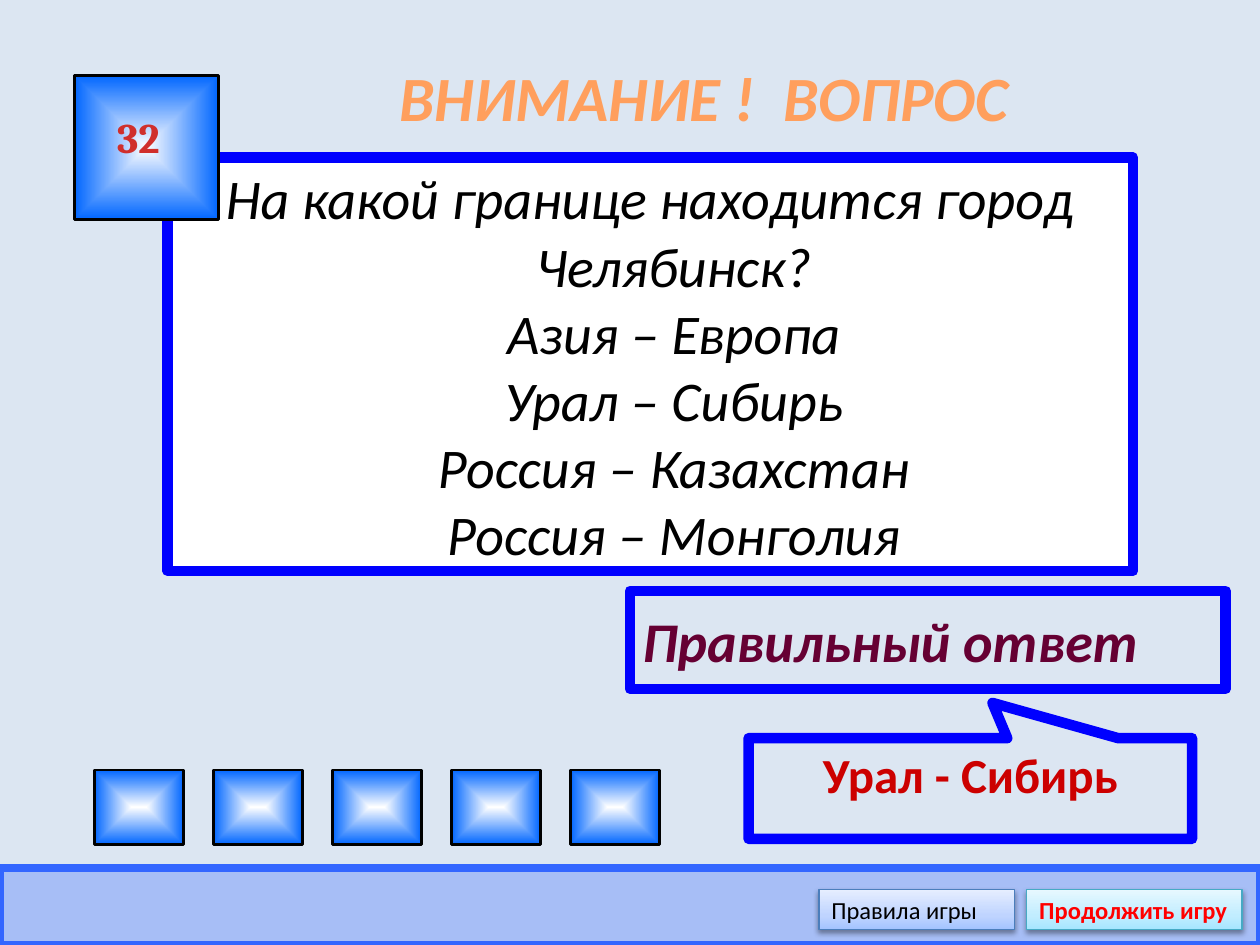
from dataclasses import dataclass
from typing import Optional, Union

import pptx
import pptx.dml.color
import pptx.enum.shapes
import pptx.enum.text
import pptx.oxml
import pptx.oxml.ns
import pptx.util
from pptx.util import Cm, Pt

Shapes = pptx.enum.shapes.MSO_SHAPE
Align = pptx.enum.text.PP_ALIGN
Anchor = pptx.enum.text.MSO_ANCHOR
qn = pptx.oxml.ns.qn
NAMESPACE = pptx.oxml.ns.nsdecls("a")

BACKGROUND = "DCE6F2"
BLUE = "0000FF"
BAR_BLUE = "3366FF"


@dataclass(frozen=True)
class Gradient:
    """Stops are (percent, colour); without an angle it spreads from the centre."""
    stops: tuple
    angle: Optional[int] = None


Paint = Union[str, Gradient]


@dataclass(frozen=True)
class Box:
    """Place and size in centimetres."""
    left: float
    top: float
    width: float
    height: float


@dataclass(frozen=True)
class Label:
    text: str
    size: int
    paint: Paint
    bold: bool = False
    italic: bool = False
    font: str = "Calibri"
    align: Align = Align.LEFT
    anchor: Anchor = Anchor.TOP
    wrap: bool = True


@dataclass(frozen=True)
class Button:
    box: Box
    fill: Gradient
    line: str
    label: Label


TILE_FILL = Gradient(((0, "FFFFFF"), (100, "0066FF")))
TITLE_PAINT = Gradient(((0, "FFA367"), (25, "FF9F5D"), (50, "F38E3A"),
                        (75, "FF9F5D"), (100, "FFA367")), 90)
NUMBER_PAINT = Gradient(((0, "FC7C7A"), (75, "D02F2C"), (100, "C70500")), 90)

QUESTION = "\v".join((
    "На какой границе находится город Челябинск?",
    "Азия – Европа",
    "Урал – Сибирь",
    "Россия – Казахстан",
    "Россия – Монголия",
))

BUTTONS = (
    Button(Box(16.51, 17.93, 3.94, 0.81),
           Gradient(((0, "A4C4FF"), (35, "BFD4FF"), (100, "E6EEFF")), 270), "4B7EBC",
           Label("Правила игры", 14, "000000", anchor=Anchor.MIDDLE, wrap=False)),
    Button(Box(20.7, 17.93, 4.34, 0.81),
           Gradient(((0, "A7E6FF"), (35, "C1EDFF"), (100, "E7F8FF")), 270), "46AAC5",
           Label("Продолжить игру", 14, "FF0000", bold=True,
                 anchor=Anchor.MIDDLE, wrap=False)),
)


def color(value: str) -> pptx.dml.color.RGBColor:
    return pptx.dml.color.RGBColor.from_string(value)


def apply_paint(fill, owner, paint: Paint) -> None:
    """Fill with a colour or gradient; owner is the XML element around the fill."""
    if isinstance(paint, str):
        fill.solid()
        fill.fore_color.rgb = color(paint)
        return
    fill.gradient()
    gradient = next(owner.iter(qn("a:gradFill")))
    for child in list(gradient):
        gradient.remove(child)
    stops = "".join(f'<a:gs pos="{position * 1000}"><a:srgbClr val="{value}"/></a:gs>'
                    for position, value in paint.stops)
    if paint.angle is None:
        direction = (f'<a:path {NAMESPACE} path="rect"><a:fillToRect l="50000" '
                     't="50000" r="50000" b="50000"/></a:path>')
    else:
        direction = f'<a:lin {NAMESPACE} ang="{paint.angle * 60000}" scaled="0"/>'
    gradient.append(pptx.oxml.parse_xml(f"<a:gsLst {NAMESPACE}>{stops}</a:gsLst>"))
    gradient.append(pptx.oxml.parse_xml(direction))


def write_label(shape, label: Label):
    frame = shape.text_frame
    frame.word_wrap = label.wrap
    frame.vertical_anchor = label.anchor
    paragraph = frame.paragraphs[0]
    paragraph.text = label.text
    paragraph.alignment = label.align
    font = paragraph.font
    font.name, font.size = label.font, Pt(label.size)
    font.bold, font.italic = label.bold, label.italic
    apply_paint(font.fill, paragraph._p, label.paint)
    return paragraph


def add_panel(slide, kind: Shapes, box: Box, fill: Paint, line: str, line_width: float):
    shape = slide.shapes.add_shape(kind, Cm(box.left), Cm(box.top),
                                   Cm(box.width), Cm(box.height))
    shape.shadow.inherit = False
    apply_paint(shape.fill, shape._element.spPr, fill)
    shape.line.color.rgb = color(line)
    shape.line.width = Pt(line_width)
    return shape


def add_text(slide, box: Box, label: Label) -> None:
    write_label(slide.shapes.add_textbox(Cm(box.left), Cm(box.top),
                                         Cm(box.width), Cm(box.height)), label)


def add_tile(slide, box: Box) -> None:
    add_panel(slide, Shapes.ACTION_BUTTON_CUSTOM, box, TILE_FILL, "000000", 1.5)


def add_question(slide) -> None:
    panel = add_panel(slide, Shapes.RECTANGLE, Box(3.38, 3.18, 19.46, 8.33),
                      "FFFFFF", BLUE, 6)
    panel.line._get_or_add_ln().append(pptx.oxml.parse_xml(f"<a:round {NAMESPACE}/>"))
    paragraph = write_label(panel, Label(QUESTION, 32, "000000", italic=True,
                                         align=Align.CENTER))
    paragraph.space_before = Pt(6.4)
    properties = paragraph._p.get_or_add_pPr()
    properties.set("marL", str(Cm(0.95)))
    properties.set("indent", str(Cm(-0.95)))


def add_answer(slide) -> None:
    heading = add_panel(slide, Shapes.RECTANGLE, Box(12.7, 11.91, 12.01, 1.98),
                        BACKGROUND, BLUE, 6)
    write_label(heading, Label("Правильный ответ", 32, "660033", bold=True, italic=True,
                               anchor=Anchor.MIDDLE, wrap=False))
    callout = add_panel(slide, Shapes.RECTANGULAR_CALLOUT, Box(15.09, 14.88, 8.94, 2.03),
                        BACKGROUND, BLUE, 6)
    callout.rotation = 180
    callout.adjustments[0] = -0.05
    callout.adjustments[1] = 0.85
    write_label(callout, Label("Урал - Сибирь", 28, "CC0000", bold=True,
                               align=Align.CENTER))
    callout.text_frame._txBody.bodyPr.set("rot", str(180 * 60000))


def add_button(slide, button: Button) -> None:
    shape = add_panel(slide, Shapes.RECTANGLE, button.box, button.fill, button.line, 0.75)
    write_label(shape, button.label)
    effects = shape._element.spPr.find(qn("a:effectLst"))
    effects.append(pptx.oxml.parse_xml(
        f'<a:outerShdw {NAMESPACE} blurRad="{Pt(3.1)}" dist="{Pt(1.6)}" '
        f'dir="{90 * 60000}" rotWithShape="0"><a:srgbClr val="000000">'
        '<a:alpha val="38000"/></a:srgbClr></a:outerShdw>'))


def main() -> None:
    presentation = pptx.Presentation()
    presentation.slide_width, presentation.slide_height = Cm(25.4), Cm(19.05)
    slide = presentation.slides.add_slide(presentation.slide_layouts[6])
    apply_paint(slide.background.fill, slide._element, BACKGROUND)

    add_text(slide, Box(6.1, 0.76, 16.2, 2.36),
             Label("ВНИМАНИЕ !  ВОПРОС", 36, TITLE_PAINT, bold=True, italic=True,
                   align=Align.CENTER, anchor=Anchor.MIDDLE))
    add_question(slide)
    add_tile(slide, Box(1.5, 1.52, 2.9, 2.9))
    add_text(slide, Box(2.11, 2.13, 1.6, 1.6),
             Label("32", 24, NUMBER_PAINT, bold=True, font="Cambria", wrap=False))
    for column in range(5):
        add_tile(slide, Box(1.9 + 2.4 * column, 15.52, 1.8, 1.5))
    add_answer(slide)
    bar = add_panel(slide, Shapes.RECTANGLE, Box(0, 17.5, 25.4, 1.55),
                    BAR_BLUE, BAR_BLUE, 4.5)
    bar_color = bar._element.spPr.find(qn("a:solidFill"))[0]
    bar_color.append(pptx.oxml.parse_xml(f'<a:alpha {NAMESPACE} val="31000"/>'))
    for button in BUTTONS:
        add_button(slide, button)
    presentation.save("out.pptx")


if __name__ == "__main__":
    main()
